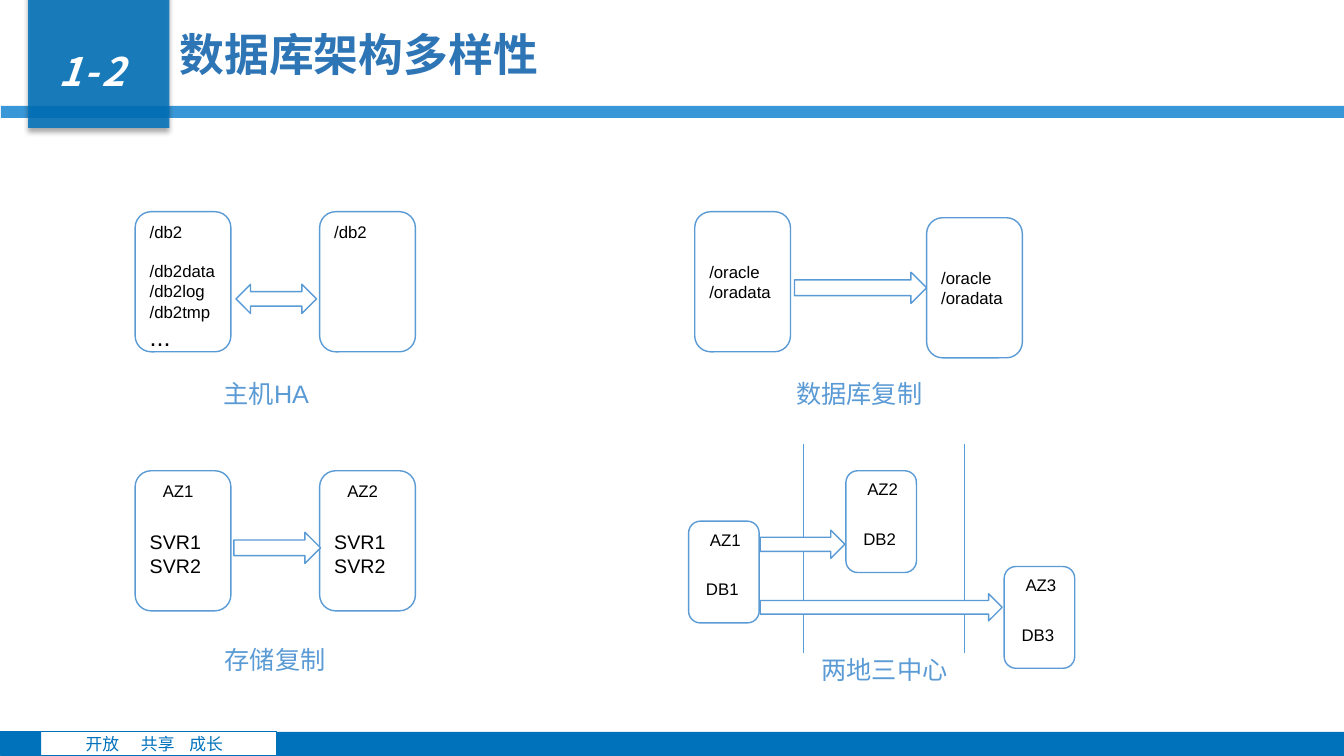
from lxml import etree
from pptx import Presentation, util as u
from pptx.dml.color import RGBColor
from pptx.enum import shapes, text
from pptx.oxml import ns

KIND = shapes.MSO_SHAPE
COLORS = {"brand": "0072BC", "band": "3A97D7", "title": "2E75B6",
          "line": "5B9BD5", "white": "FFFFFF", "ink": "000000"}
SANS, LATIN = "Noto Sans CJK SC", "Arial"
COLS, ROWS = 133.3, 75
CELL = u.Inches(0.1)
TALL, SMALL = (9.5, 13.9), (7, 10.1)


def rgb(name):
    """Return the named palette colour."""
    return RGBColor.from_string(COLORS[name])


def grid(*cells):
    """Turn grid cells into lengths."""
    return [round(cell * CELL) for cell in cells]


def style(para, size, color, face=LATIN, bold=False):
    """Format every run of a paragraph."""
    for run in para.runs:
        run.font.size = u.Pt(size)
        run.font.name = face
        run.font.bold = bold
        run.font.color.rgb = rgb(color)
        east = etree.SubElement(run._r.get_or_add_rPr(), ns.qn("a:ea"))
        east.set("typeface", SANS)


def block(slide, kind, box, fill=None, line=None, width=1):
    """Add a preset shape on the grid."""
    shape = slide.shapes.add_shape(kind, *grid(*box))
    shape.shadow.inherit = False
    if fill:
        shape.fill.solid()
        shape.fill.fore_color.rgb = rgb(fill)
    else:
        shape.fill.background()
    if line:
        shape.line.color.rgb = rgb(line)
        shape.line.width = u.Pt(width)
    else:
        shape.line.fill.background()
    return shape


def label(slide, words, box, size, color, face=LATIN, bold=False, wrap=True):
    """Add a one-line text box and return it."""
    shape = slide.shapes.add_textbox(*grid(*box))
    frame = shape.text_frame
    frame.word_wrap = wrap
    frame.text = words
    style(frame.paragraphs[0], size, color, face, bold)
    return shape


def node(slide, spot, size, lines, top=0.05):
    """Add a rounded box; a line is words, size, space before, indent."""
    shape = block(slide, KIND.ROUNDED_RECTANGLE, (*spot, *size), "white", "line")
    frame = shape.text_frame
    frame.word_wrap = True
    frame.vertical_anchor = text.MSO_ANCHOR.TOP
    frame.margin_top, frame.margin_right = u.Inches(top), 0
    for i, (words, points, gap, indent) in enumerate(lines):
        para = frame.add_paragraph() if i else frame.paragraphs[0]
        para.text = words
        para.alignment = text.PP_ALIGN.LEFT
        if gap:
            para.space_before = u.Pt(gap)
        if indent:
            para._p.get_or_add_pPr().set("marL", str(u.Inches(indent)))
        style(para, points, "ink")


def arrow(slide, box, kind=KIND.RIGHT_ARROW):
    """Add an outlined block arrow."""
    block(slide, kind, box, "white", "line")


def footer(slide, x, y, w, h):
    """Draw the bottom bar with the motto."""
    block(slide, KIND.RECTANGLE, (x + 27.3, y, w - 27.3, h), "brand")
    block(slide, KIND.RECTANGLE, (x, y, 27.3, h), None, "brand", 0.75)
    for word, left in (("开放", 7.4), ("共享", 12.9), ("成长", 17.7)):
        shape = label(slide, word, (x + left, y + 0.2, 5.5, 2.5), 12, "brand", SANS)
        shape.text_frame.vertical_anchor = text.MSO_ANCHOR.BOTTOM
    block(slide, KIND.RECTANGLE, (x, y, 4, h), "brand")


def header(slide, x, y, w, h):
    """Draw the band, the number tile and the title."""
    block(slide, KIND.RECTANGLE, (x, y + h - 1.2, w, 1.2), "band")
    tile = block(slide, KIND.RECTANGLE, (x + 2.7, y - 0.8, 14, 13.5), "brand")
    paint = tile._element.spPr.find(".//" + ns.qn("a:srgbClr"))
    etree.SubElement(paint, ns.qn("a:alpha")).set("val", "85000")
    glow = etree.SubElement(tile._element.spPr.find(ns.qn("a:effectLst")),
                            ns.qn("a:outerShdw"), blurRad=str(u.Pt(4)),
                            dist=str(u.Pt(3)), dir="5400000", rotWithShape="0")
    shade = etree.SubElement(glow, ns.qn("a:srgbClr"), val=COLORS["ink"])
    etree.SubElement(shade, ns.qn("a:alpha")).set("val", "40000")

    title = slide.shapes.title
    title.left, title.top, title.width, title.height = grid(x + 16.7, y + 0.6, 113.8, 9.5)
    frame = title.text_frame
    frame.text = "数据库架构多样性"
    frame.auto_size = text.MSO_AUTO_SIZE.NONE
    frame.vertical_anchor = text.MSO_ANCHOR.MIDDLE
    para = frame.paragraphs[0]
    para.alignment = text.PP_ALIGN.LEFT
    style(para, 32, "title", SANS, True)

    mark = label(slide, "1-2", (x + 4.3, y + 4.2, 9.3, 6), 28, "white", SANS, True, False)
    para = mark.text_frame.paragraphs[0]
    para.alignment = text.PP_ALIGN.CENTER
    run = para.runs[0]
    run.font.italic = True
    run._r.get_or_add_rPr().set("spc", "200")


def host(slide, x, y):
    """Draw the host failover pair."""
    paths = [("/db2", 12, 0, 0), ("/db2data", 12, 14, 0), ("/db2log", 12, 0, 0),
             ("/db2tmp", 12, 0, 0), ("...", 18, 0, 0)]
    node(slide, (x, y), TALL, paths)
    node(slide, (x + 18.3, y), TALL, paths[:1])
    arrow(slide, (x + 10, y + 7.2, 8, 2.9), KIND.LEFT_RIGHT_ARROW)
    label(slide, "主机HA", (x + 7.8, y + 16, 12.3, 4), 18, "line")


def copies(slide, x, y):
    """Draw the database replication pair."""
    paths = [("/oracle", 12, 0, 0), ("/oradata", 12, 0, 0)]
    node(slide, (x, y), TALL, paths, 0.45)
    arrow(slide, (x + 9.9, y + 6, 13.1, 3.1))
    node(slide, (x + 23, y + 0.6), TALL, paths, 0.45)
    label(slide, "数据库复制", (x + 9.1, y + 16, 14.7, 4), 18, "line")


def storage(slide, x, y):
    """Draw the storage replication pair."""
    for i in range(2):
        node(slide, (x + 18.3 * i, y), TALL,
             [(f"AZ{i + 1}", 12, 0, 0.13), ("SVR1", 14, 21, 0), ("SVR2", 14, 0, 0)])
    arrow(slide, (x + 9.8, y + 6.1, 8.6, 3.1))
    label(slide, "存储复制", (x + 7.9, y + 16.7, 12.3, 4), 18, "line")


def sites(slide, x, y):
    """Draw three centres in two places."""
    for num, left, top in ((1, 0, 7.7), (3, 31.3, 12.2), (2, 15.6, 2.7)):
        node(slide, (x + left, y + top), SMALL,
             [(f"AZ{num}", 12, 0, 0.08), (f"DB{num}", 12, 21, 0.04)])
    for left in (11.4, 27.3):
        ends = grid(x + left, y, x + left, y + 20.8)
        rule = slide.shapes.add_connector(shapes.MSO_CONNECTOR.STRAIGHT, *ends)
        rule.line.color.rgb = rgb("line")
        rule.line.width = u.Pt(0.5)
        etree.SubElement(rule._element.spPr, ns.qn("a:effectLst"))
    arrow(slide, (x + 7.1, y + 8.6, 8.4, 2.8))
    arrow(slide, (x + 7.1, y + 14.9, 24, 2.7))
    label(slide, "两地三中心", (x + 12.2, y + 20.4, 15.9, 4), 18, "line")


def main():
    """Build and save the slide."""
    deck = Presentation()
    deck.slide_width, deck.slide_height = grid(COLS, ROWS)
    slide = deck.slides.add_slide(deck.slide_layouts[5])
    footer(slide, 0.1, 72.6, COLS - 0.1, 2.4)
    header(slide, 0.1, 0, COLS - 0.1, 11.7)
    host(slide, 13.4, 21)
    copies(slide, 68.9, 21)
    storage(slide, 13.4, 46.7)
    sites(slide, 68.3, 44)
    deck.save("out.pptx")


if __name__ == "__main__":
    main()
